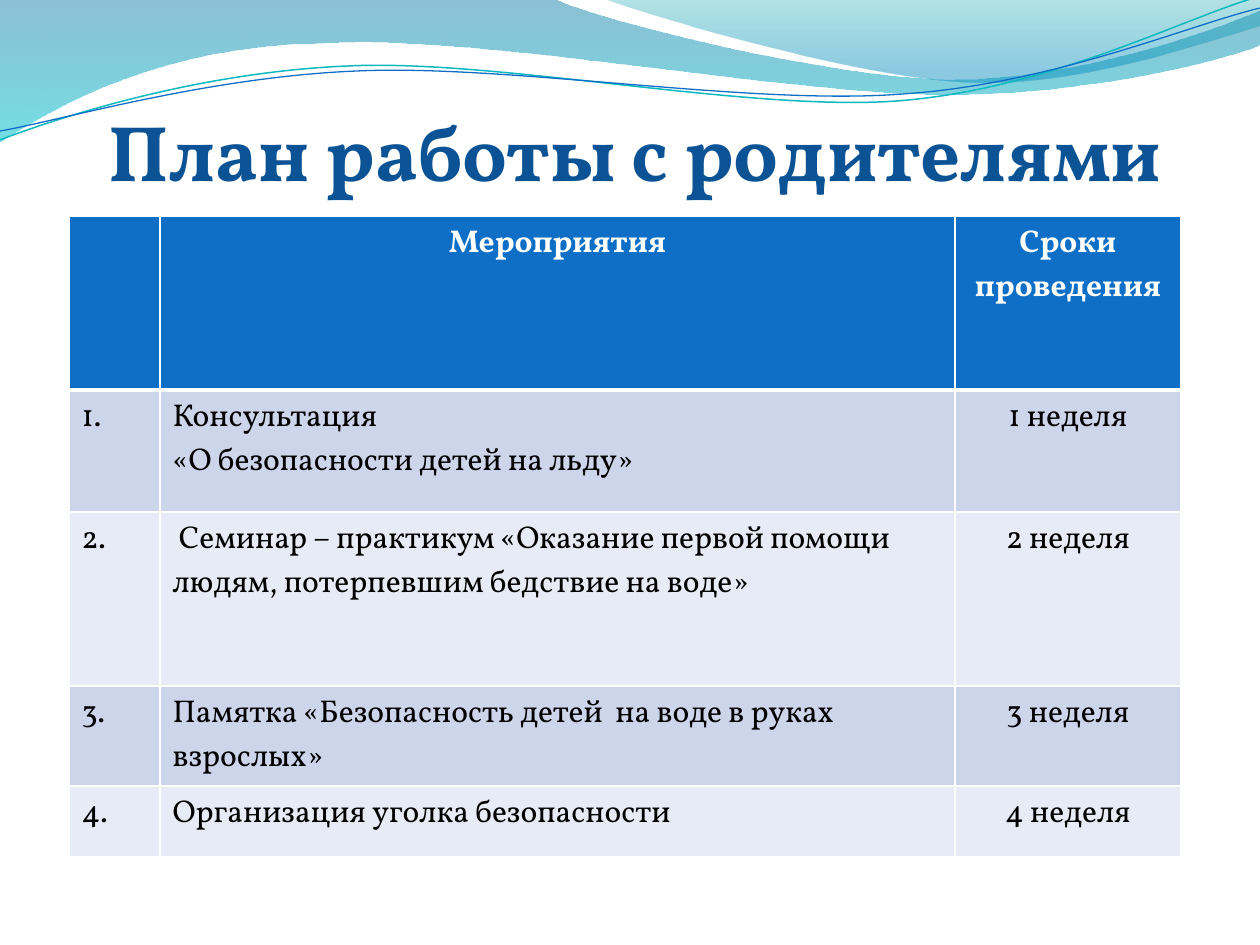
from math import cos, radians, sin

from lxml import etree
from pptx import Presentation
from pptx.dml.color import RGBColor
from pptx.enum.text import MSO_ANCHOR, PP_ALIGN
from pptx.oxml.ns import qn
from pptx.util import Emu, Pt

PX = 914400 // 126
CENTER, LEFT = PP_ALIGN.CENTER, PP_ALIGN.LEFT
BOTTOM = MSO_ANCHOR.BOTTOM
FONT = "Vollkorn"
LINE_TILT = -2.7
LINE_CENTER = (629, 73)

BAND = [(0, 0), (554, -1), (600, 21, 837, 79, 955, 79), (1075, 79, 1207, 33, 1260, 11),
        (1261, 45), (1239, 55, 1096, 96, 940, 94), (784, 94, 481, 35, 324, 43),
        (163, 45, 58, 105, -1, 142)]
FOLD = [(604, -1), (641, 14, 859, 78, 969, 82), (1079, 87, 1211, 40, 1260, 26), (1260, 0)]
TEAL_LINE = [(0, 140), (60, 117, 199, 72, 349, 66), (498, 59, 747, 112, 898, 101),
             (1050, 89, 1182, 19, 1257, -3)]
BLUE_LINE = [(0, 131), (59, 121, 207, 77, 357, 71), (508, 64, 752, 106, 903, 94),
             (1053, 84, 1186, 26, 1260, 8)]

HEADER = ["", "Мероприятия", "Сроки проведения"]
ACTIVITIES = [
    "Консультация\n«О безопасности детей на льду»",
    " Семинар – практикум «Оказание первой помощи людям, потерпевшим бедствие на воде»",
    "Памятка «Безопасность детей  на воде в руках взрослых»",
    "Организация уголка безопасности",
]
COLUMN_WIDTHS = [91, 795, 226]
ROW_HEIGHTS = [174, 122, 174, 100, 71]


def px(length):
    """Turn a length in px into EMU."""
    return Emu(length * PX)


def color(value):
    """Turn a hex string into a colour."""
    return RGBColor.from_string(value)


def turn(point, angle):
    """Turn a point about the middle of the lines, clockwise in degrees."""
    across, down = (value - middle for value, middle in zip(point, LINE_CENTER))
    c, s = cos(radians(angle)), sin(radians(angle))
    return LINE_CENTER[0] + across * c - down * s, LINE_CENTER[1] + across * s + down * c


def add_outline(page, left, top, steps, close, tilt=0):
    """Add a freeform whose steps are points or cubic curves."""
    points = [turn(step[i:i + 2], -tilt) for step in steps for i in range(0, len(step), 2)]
    corners = [(round((left + x) * PX), round((top + y) * PX)) for x, y in points]
    builder = page.shapes.build_freeform(*corners[0], scale=1.0)
    builder.add_line_segments(corners[1:], close=close)
    shape = builder.convert_to_shape()
    shape.shadow.inherit = False
    shape.rotation = tilt
    segments = iter(list(shape._element.spPr.iter(qn("a:lnTo"))))
    for step in steps[1:]:
        first = next(segments)
        if len(step) == 6:
            curve = etree.Element(qn("a:cubicBezTo"))
            first.addprevious(curve)
            for segment in (first, next(segments), next(segments)):
                curve.append(segment[0])
                segment.getparent().remove(segment)
    return shape


def add_waves(page, left, top):
    """Draw the translucent bands and the two thin lines over them."""
    bands = [(BAND, [("0074A1", 0, 45), ("00C6CF", 1, 55)]),
             (FOLD, [("00A1A9", 0, 30), ("008BBF", 0.8, 45)])]
    for steps, stops in bands:
        shape = add_outline(page, left, top, steps, True)
        shape.line.fill.background()
        shape.fill.gradient()
        shape.fill.gradient_angle = 270
        for stop, (value, position, opacity) in zip(shape.fill.gradient_stops, stops):
            stop.color.rgb = color(value)
            stop.position = position
        tints = shape._element.spPr.iter(qn("a:srgbClr"))
        for tint, (value, position, opacity) in zip(tints, stops):
            etree.SubElement(tint, qn("a:alpha"), val=str(opacity * 1000))
    for steps, value, width in [(TEAL_LINE, "0AB8BF", 0.85), (BLUE_LINE, "0F6FC6", 0.75)]:
        shape = add_outline(page, left, top, steps, False, LINE_TILT)
        shape.fill.background()
        shape.line.color.rgb = color(value)
        shape.line.width = Pt(width)


def write(frame, text, align, value, **formats):
    """Write each line of the text as a formatted paragraph."""
    for index, line in enumerate(text.split("\n")):
        para = frame.paragraphs[0] if index == 0 else frame.add_paragraph()
        para.alignment = align
        span = para.add_run()
        span.text = line
        span.font.color.rgb = color(value)
        for name, setting in {"name": FONT, **formats}.items():
            setattr(span.font, name, setting)


def add_title(page, left, top, width, height):
    """Place the heading at the bottom of its box."""
    box = page.shapes.add_textbox(px(left), px(top), px(width), px(height))
    frame = box.text_frame
    settings = {"word_wrap": True, "vertical_anchor": BOTTOM, "margin_left": 0,
                "margin_right": 0, "margin_top": Pt(3.6), "margin_bottom": 0}
    for name, setting in settings.items():
        setattr(frame, name, setting)
    write(frame, "План работы с родителями", CENTER, "0B5394", size=Pt(45), bold=True)


def add_borders(cell, widths):
    """Give the cell white borders of the given widths in points."""
    properties = cell._tc.get_or_add_tcPr()
    for side, width in widths.items():
        border = etree.SubElement(properties, qn(f"a:ln{side}"), w=str(Pt(width)))
        fill = etree.SubElement(border, qn("a:solidFill"))
        etree.SubElement(fill, qn("a:srgbClr"), val="FFFFFF")


def add_plan(page, left, top):
    """Place the table of activities and weeks."""
    rows = [HEADER] + [[f"{number}.", activity, f"{number} неделя"]
                       for number, activity in enumerate(ACTIVITIES, 1)]
    table = page.shapes.add_table(len(rows), len(HEADER), px(left), px(top),
                                  px(sum(COLUMN_WIDTHS)), px(sum(ROW_HEIGHTS))).table
    for column, width in zip(table.columns, COLUMN_WIDTHS):
        column.width = px(width)
    for index, (row, height, texts) in enumerate(zip(table.rows, ROW_HEIGHTS, rows)):
        row.height = px(height)
        is_header = index == 0
        background = "0F6FC6" if is_header else ("E7EBF5", "CCD5EA")[index % 2]
        for position, (cell, text) in enumerate(zip(row.cells, texts)):
            add_borders(cell, {"L": 1, "R": 1, "T": 3 if index == 1 else 1,
                               "B": 3 if is_header else 1})
            cell.fill.solid()
            cell.fill.fore_color.rgb = color(background)
            if text:
                write(cell.text_frame, text, CENTER if is_header or position == 2 else LEFT,
                      "FFFFFF" if is_header else "000000", size=Pt(18), bold=is_header)


def main():
    """Build the slide and save the deck."""
    deck = Presentation()
    deck.slide_width, deck.slide_height = px(1260), px(945)
    page = deck.slides.add_slide(deck.slide_layouts[6])
    add_waves(page, 0, 0)
    add_title(page, 63, 79, 1144, 118)
    add_plan(page, 69, 216)
    deck.save("out.pptx")


if __name__ == "__main__":
    main()
